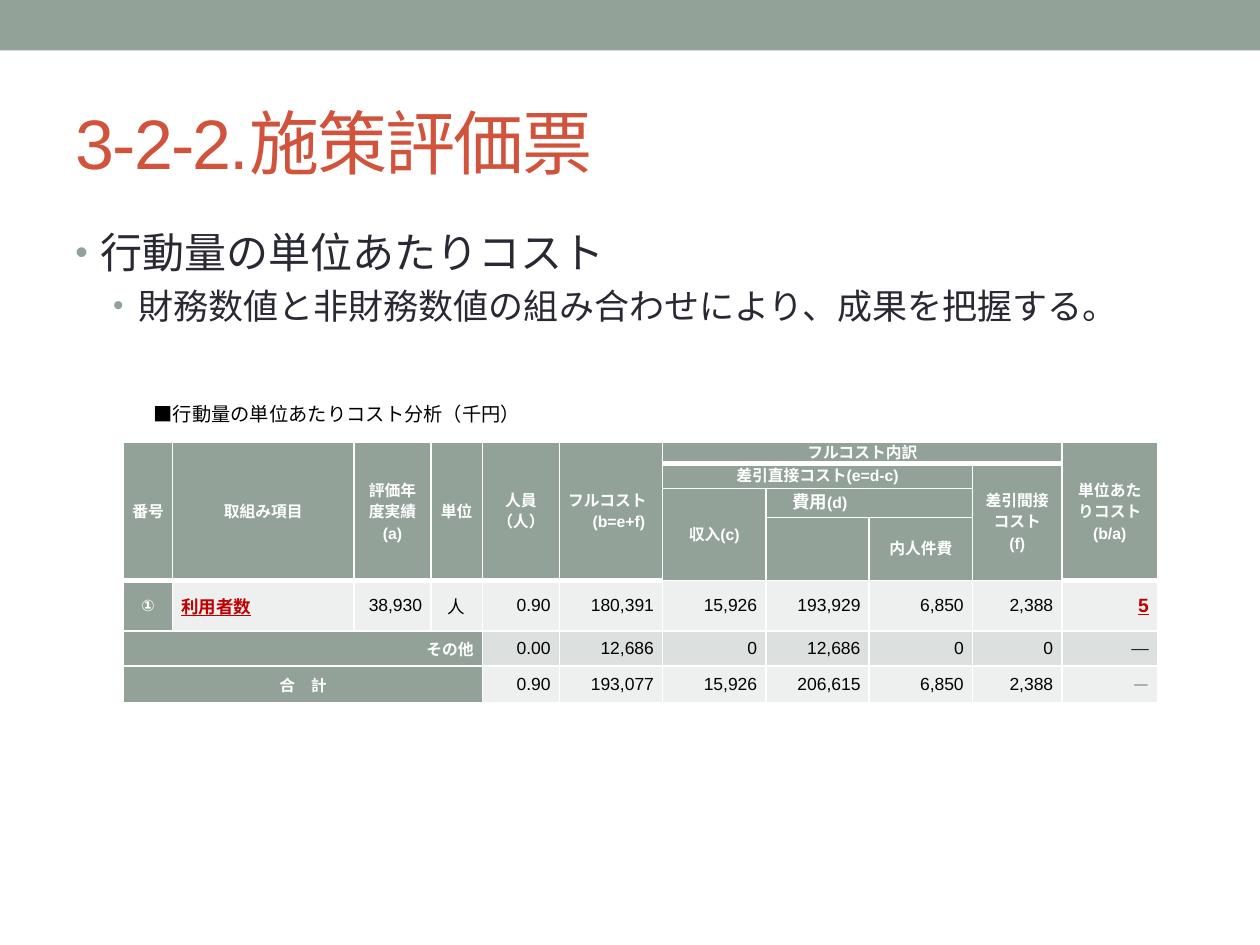
from dataclasses import dataclass

import pptx
import pptx.dml.color
import pptx.enum.shapes
import pptx.enum.text
import pptx.oxml
import pptx.oxml.ns
import pptx.util
from pptx.dml.color import RGBColor
from pptx.util import Inches

SAGE = RGBColor(0x93, 0xA2, 0x99)
PALE = RGBColor(0xEE, 0xF0, 0xEF)
SHADE = RGBColor(0xDC, 0xE0, 0xDE)
RUST = RGBColor(0xD2, 0x53, 0x3C)
RED = RGBColor(0xC0, 0x00, 0x00)
INK = RGBColor(0x29, 0x29, 0x34)
BLACK = RGBColor(0, 0, 0)
WHITE = RGBColor(255, 255, 255)

LATIN = "Arial"
JAPANESE = "Noto Sans CJK JP"
ALIGN = pptx.enum.text.PP_ALIGN
MIDDLE = pptx.enum.text.MSO_ANCHOR.MIDDLE

COLUMN_WIDTHS = [0.39, 1.44, 0.61, 0.41, 0.61, 0.82, 0.82, 0.82, 0.82, 0.71, 0.76]
ROW_HEIGHTS = [0.09, 0.2, 0.23, 0.15, 0.4, 0.28, 0.29]
HEADER_ROWS = 4
FIRST_VALUE_COLUMN = 4


@dataclass(frozen=True)
class Heading:
    row: int
    column: int
    text: str
    rows: int = 1
    columns: int = 1


HEADINGS = [
    Heading(0, 0, "番号", rows=4),
    Heading(0, 1, "取組み項目", rows=4),
    Heading(0, 2, "評価年度実績(a)", rows=4),
    Heading(0, 3, "単位", rows=4),
    Heading(0, 4, "人員\n（人）", rows=4),
    Heading(0, 5, "フルコスト\n　(b=e+f)", rows=4),
    Heading(0, 6, "フルコスト内訳", columns=4),
    Heading(0, 10, "単位あたりコスト\n(b/a)", rows=4),
    Heading(1, 6, "差引直接コスト(e=d-c)", columns=3),
    Heading(1, 9, "差引間接\nコスト\n(f)", rows=3),
    Heading(2, 6, "収入(c)", rows=2),
    Heading(3, 8, "内人件費"),
]
VALUES = {
    4: ["0.90", "180,391", "15,926", "193,929", "6,850", "2,388"],
    5: ["0.00", "12,686", "0", "12,686", "0", "0"],
    6: ["0.90", "193,077", "15,926", "206,615", "6,850", "2,388"],
}


def write(paragraph, text: str, *, size: float, color: RGBColor, bold: bool = False,
          underline: bool = False, font: str = LATIN, align=None,
          line: float | None = None, before: float | None = None,
          tracking: int | None = None) -> None:
    """Append a formatted run to a paragraph."""
    run = paragraph.add_run()
    run.text = text
    run.font.size = pptx.util.Pt(size)
    run.font.color.rgb = color
    run.font.bold = bold
    run.font.underline = underline
    run.font.name = font
    properties = run._r.get_or_add_rPr()
    properties.append(pptx.oxml.parse_xml(
        f'<a:ea {pptx.oxml.ns.nsdecls("a")} typeface="{JAPANESE}"/>'))
    if tracking is not None:
        properties.set("spc", str(tracking))
    if align is not None:
        paragraph.alignment = align
    if line is not None:
        paragraph.line_spacing = pptx.util.Pt(line)
    if before is not None:
        paragraph.space_before = pptx.util.Pt(before)


def indent(paragraph, left: float, first: float) -> None:
    properties = paragraph._p.get_or_add_pPr()
    properties.set("marL", str(Inches(left)))
    properties.set("indent", str(Inches(first)))


def add_bullet(paragraph) -> None:
    properties = paragraph._p.get_or_add_pPr()
    for element in (f'<a:buClr {{ns}}><a:srgbClr val="{SAGE}"/></a:buClr>',
                    '<a:buSzPct {ns} val="85000"/>',
                    '<a:buFont {ns} typeface="Arial"/>',
                    '<a:buChar {ns} char="•"/>'):
        properties.append(pptx.oxml.parse_xml(element.format(ns=pptx.oxml.ns.nsdecls("a"))))


def add_text_frame(slide, left: float, top: float, width: float, height: float):
    frame = slide.shapes.add_textbox(
        Inches(left), Inches(top), Inches(width), Inches(height)).text_frame
    frame.word_wrap = True
    return frame


def set_borders(cell, bottom: float = 1) -> None:
    properties = cell._tc.get_or_add_tcPr()
    for index, (side, width) in enumerate(
            {"lnL": 1, "lnR": 1, "lnT": 1, "lnB": bottom}.items()):
        properties.insert(index, pptx.oxml.parse_xml(
            f'<a:{side} {pptx.oxml.ns.nsdecls("a")} w="{pptx.util.Pt(width)}">'
            f'<a:solidFill><a:srgbClr val="{WHITE}"/></a:solidFill></a:{side}>'))


def fill_cell(cell, text: str, **style) -> None:
    """Write one paragraph per line of text, centred vertically in the cell."""
    cell.vertical_anchor = MIDDLE
    cell.margin_left = cell.margin_right = Inches(0.07)
    cell.margin_top = cell.margin_bottom = 0
    frame = cell.text_frame
    for number, part in enumerate(text.split("\n")):
        paragraph = frame.add_paragraph() if number else frame.paragraphs[0]
        write(paragraph, part, **style)


def add_cost_table(slide) -> None:
    frame = slide.shapes.add_table(len(ROW_HEIGHTS), len(COLUMN_WIDTHS), Inches(0.98),
                                   Inches(3.51), Inches(8.19), Inches(1.74))
    table = frame.table
    table.first_row = table.horz_banding = False
    for column, width in zip(table.columns, COLUMN_WIDTHS):
        column.width = Inches(width)
    for row, height in zip(table.rows, ROW_HEIGHTS):
        row.height = Inches(height)

    for r in range(len(ROW_HEIGHTS)):
        for c in range(len(COLUMN_WIDTHS)):
            cell = table.cell(r, c)
            labelled = r < HEADER_ROWS or c == 0 or (r > 4 and c < FIRST_VALUE_COLUMN)
            cell.fill.solid()
            cell.fill.fore_color.rgb = SAGE if labelled else SHADE if r == 5 else PALE
            set_borders(cell, bottom=3 if r == 0 else 1)

    label = dict(size=9, color=WHITE, bold=True)
    header = dict(label, align=ALIGN.CENTER, line=12)
    for heading in HEADINGS:
        cell = table.cell(heading.row, heading.column)
        if heading.rows * heading.columns > 1:
            cell.merge(table.cell(heading.row + heading.rows - 1,
                                  heading.column + heading.columns - 1))
        fill_cell(cell, heading.text, **header)
    table.cell(0, 5).text_frame.paragraphs[0].alignment = ALIGN.JUSTIFY

    expense = table.cell(2, 7)
    expense.merge(table.cell(2, 8))
    fill_cell(expense, "費用", size=10, color=WHITE, bold=True, line=12)
    expense_line = expense.text_frame.paragraphs[0]
    write(expense_line, "(d)", **label)
    indent(expense_line, 0, 0.14)

    number = dict(size=10, color=BLACK, align=ALIGN.RIGHT)
    fill_cell(table.cell(4, 0), "①", **label, align=ALIGN.CENTER)
    fill_cell(table.cell(4, 1), "利用者数", size=10, color=RED, bold=True, underline=True)
    fill_cell(table.cell(4, 2), "38,930", **number)
    fill_cell(table.cell(4, 3), "人", size=10, color=BLACK, font=JAPANESE, align=ALIGN.CENTER)
    for r, text, align in ((5, "その他", ALIGN.RIGHT), (6, "合　計", ALIGN.CENTER)):
        table.cell(r, 0).merge(table.cell(r, FIRST_VALUE_COLUMN - 1))
        fill_cell(table.cell(r, 0), text, **label, align=align)
    for r, values in VALUES.items():
        for c, value in enumerate(values, FIRST_VALUE_COLUMN):
            fill_cell(table.cell(r, c), value, **number)
    fill_cell(table.cell(4, 10), "5", size=11, color=RED, bold=True, underline=True,
              align=ALIGN.RIGHT)
    fill_cell(table.cell(5, 10), "―", size=10, color=INK, align=ALIGN.RIGHT)
    fill_cell(table.cell(6, 10), "　―", size=9, color=INK, align=ALIGN.RIGHT)
    frame.height = Inches(1.74)


def main() -> None:
    deck = pptx.Presentation()
    deck.slide_width, deck.slide_height = Inches(10), Inches(7.5)
    slide = deck.slides.add_slide(deck.slide_layouts[6])

    band = slide.shapes.add_shape(pptx.enum.shapes.MSO_SHAPE.RECTANGLE,
                                  0, 0, Inches(10), Inches(0.4))
    band.shadow.inherit = False
    band.fill.solid()
    band.fill.fore_color.rgb = SAGE
    band.line.fill.background()

    title = add_text_frame(slide, 0.5, 0.58, 9, 1.08)
    title.vertical_anchor = MIDDLE
    write(title.paragraphs[0], "3-2-2.施策評価票", size=40, color=RUST, tracking=-100)

    body = add_text_frame(slide, 0.5, 1.75, 9, 5.33)
    topic, detail = body.paragraphs[0], body.add_paragraph()
    detail.level = 1
    for point, text, size, left in (
            (topic, "行動量の単位あたりコスト", 24, 0.2),
            (detail, "財務数値と非財務数値の組み合わせにより、成果を把握する。", 20, 0.5)):
        write(point, text, size=size, color=INK, before=size * 0.2)
        indent(point, left, -0.2)
        add_bullet(point)

    add_cost_table(slide)

    caption = add_text_frame(slide, 0.98, 3.14, 7.41, 0.29)
    caption.vertical_anchor = MIDDLE
    caption.auto_size = pptx.enum.text.MSO_AUTO_SIZE.SHAPE_TO_FIT_TEXT
    write(caption.paragraphs[0], "■行動量の単位あたりコスト分析（千円）",
          size=11, color=BLACK, font=JAPANESE)
    indent(caption.paragraphs[0], 0, 0.14)

    deck.save("out.pptx")


if __name__ == "__main__":
    main()
